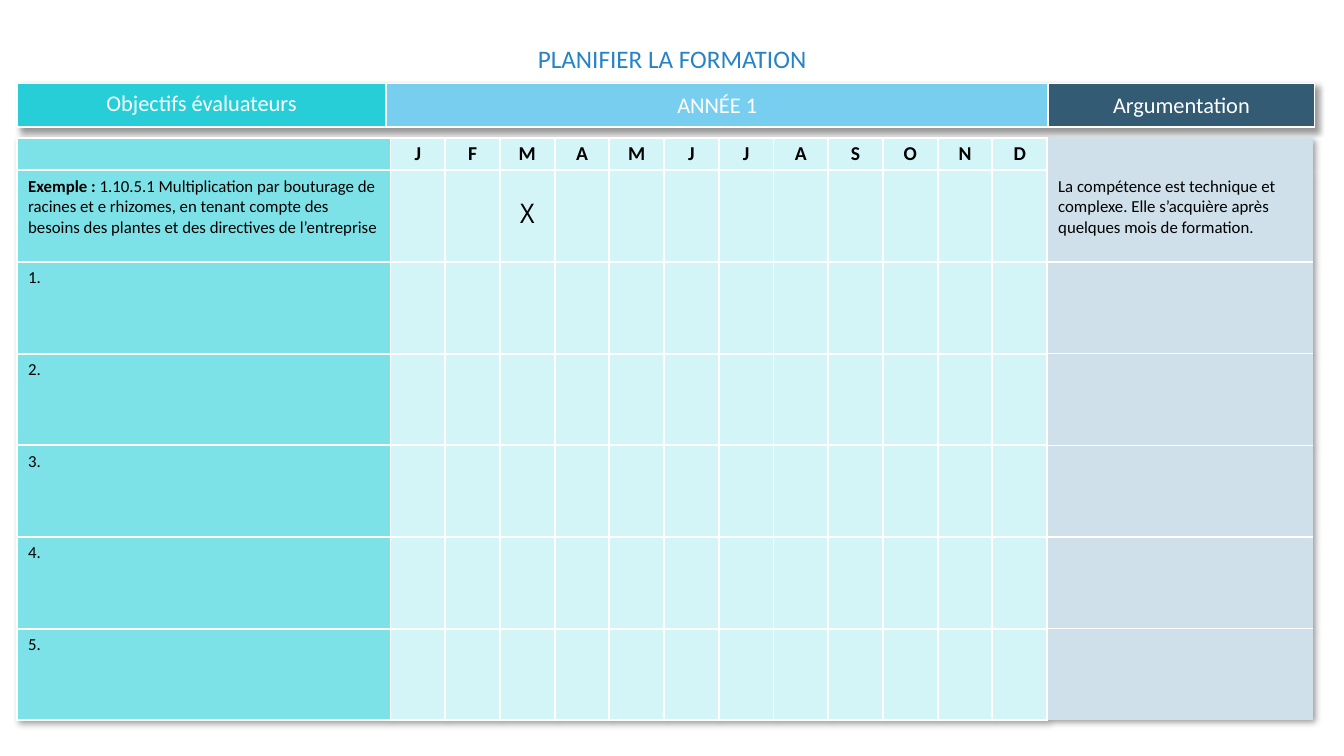
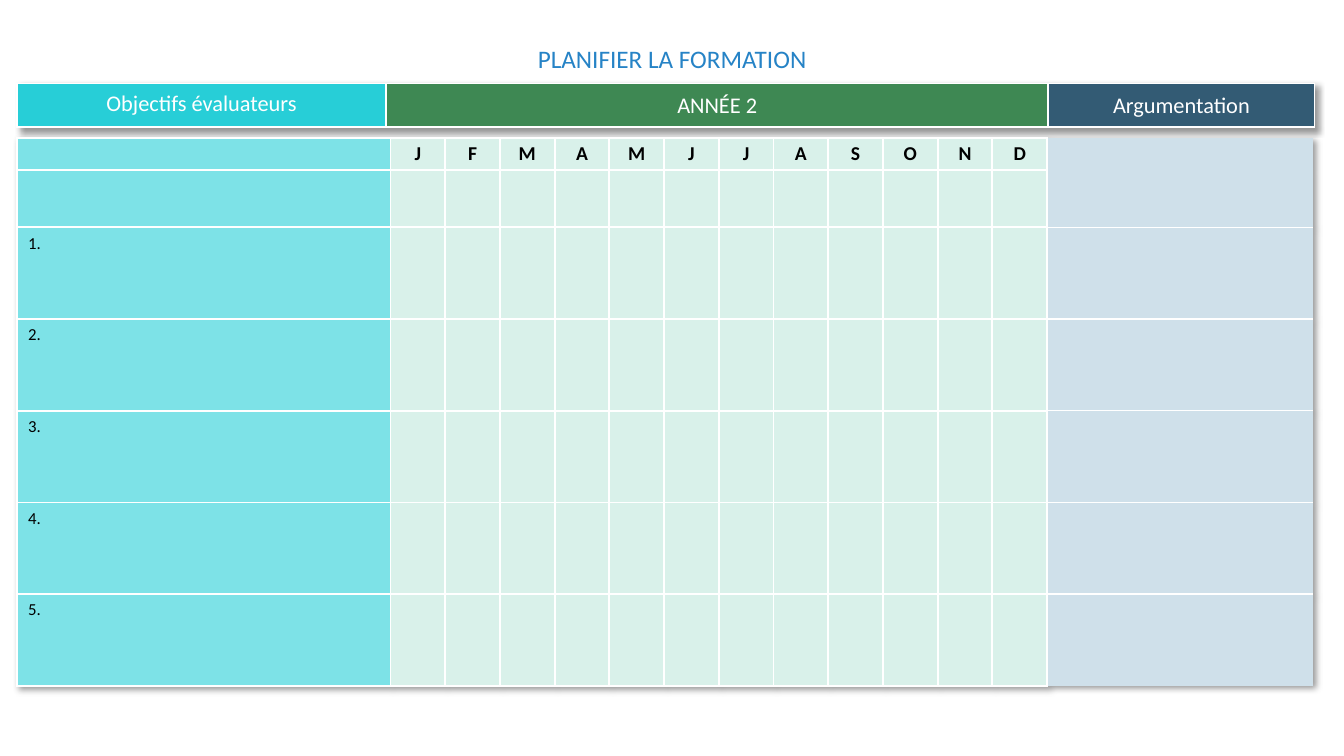
import pptx
import pptx.dml.color
import pptx.enum.text
import pptx.oxml
import pptx.oxml.ns
import pptx.util

Cm = pptx.util.Cm
Pt = pptx.util.Pt
ALIGN = pptx.enum.text.PP_ALIGN
ANCHOR = pptx.enum.text.MSO_ANCHOR
SPACE = pptx.oxml.ns.nsdecls("a")

# Shared colours and measures (cm)
WHITE, BLACK, BLUE = "FFFFFF", "000000", "2683C6"
AQUA, PALE = "27CED7", "7DE2E7"
NAVY, MIST = "335B74", "CFE0EA"
LEFT = 0.43
HEAD = [9.3, 16.69, 6.71]
COLS = [9.41] + [1.38] * 12 + [6.71]
MONTHS = "JFMAMJJASOND"
TALL = 2.31
PLAIN_STYLE = "{2D5ABB26-0587-4C30-8999-92F81FD0307C}"


def hue(code):
    return pptx.dml.color.RGBColor.from_string(code)


class Deck:
    font = "Calibri"

    def __init__(self):
        self.file = pptx.Presentation()
        self.file.slide_width = Cm(33.87)
        self.file.slide_height = Cm(19.05)
        self.slide = None

    def page(self):
        self.slide = self.file.slides.add_slide(self.file.slide_layouts[6])

    def style(self, run, size, color, bold=False, font=None):
        run.font.name = font or self.font
        run.font.size = Pt(size)
        run.font.bold = bold
        run.font.color.rgb = hue(color)

    def title(self, text):
        box = self.slide.shapes.add_textbox(
            Cm(1.7), Cm(0.76), Cm(30.48), Cm(1.37))
        frame = box.text_frame
        frame.word_wrap = True
        frame.vertical_anchor = ANCHOR.MIDDLE
        frame.text = text
        para = frame.paragraphs[0]
        para.alignment = ALIGN.CENTER
        para.line_spacing = 1.07
        para.space_after = Pt(8)
        self.style(para.runs[0], 18, BLUE)

    def table(self, top, cols, rows):
        frame = self.slide.shapes.add_table(
            len(rows), len(cols), Cm(LEFT), Cm(top),
            Cm(sum(cols)), Cm(sum(rows)))
        grid = frame.table
        grid.first_row = grid.horz_banding = False
        for part, size in zip(grid.columns, cols):
            part.width = Cm(size)
        for part, size in zip(grid.rows, rows):
            part.height = Cm(size)
        # Plain table style with a soft shadow
        props = grid._tbl.tblPr
        props.find(pptx.oxml.ns.qn("a:tableStyleId")).text = PLAIN_STYLE
        props.insert(0, pptx.oxml.parse_xml(
            f'<a:effectLst {SPACE}><a:outerShdw blurRad="50800" dist="38100" '
            'dir="2700000" algn="tl" rotWithShape="0"><a:srgbClr val="000000">'
            '<a:alpha val="40000"/></a:srgbClr></a:outerShdw></a:effectLst>'))
        return grid

    def cell(self, cell, fill, edges, pad=(0.28, 0.15)):
        """Fill and pad a cell; edges maps L, R, T, B to widths in points."""
        cell.fill.solid()
        cell.fill.fore_color.rgb = hue(fill)
        cell.margin_left = cell.margin_right = Cm(pad[0])
        cell.margin_top = cell.margin_bottom = Cm(pad[1])
        props = cell._tc.get_or_add_tcPr()
        for spot, side in enumerate(s for s in "LRTB" if s in edges):
            props.insert(spot, pptx.oxml.parse_xml(
                f'<a:ln{side} {SPACE} w="{Pt(edges[side])}"><a:solidFill>'
                f'<a:srgbClr val="{WHITE}"/></a:solidFill></a:ln{side}>'))

    def label(self, cell, text, size, color=BLACK, bold=False, font=None,
              center=False, middle=False, lead=""):
        """Put text in a cell, after an optional bold lead."""
        para = cell.text_frame.paragraphs[0]
        if lead:
            run = para.add_run()
            run.text = lead
            self.style(run, size, color, True, font)
        run = para.add_run()
        run.text = text
        self.style(run, size, color, bold, font)
        if center:
            para.alignment = ALIGN.CENTER
        if middle:
            cell.vertical_anchor = ANCHOR.MIDDLE

    def header(self, year, tint):
        grid = self.table(2.11, HEAD, [1.09])
        parts = [("Objectifs évaluateurs", AQUA), (year, tint),
                 ("Argumentation", NAVY)]
        last = len(parts) - 1
        for col, (text, fill) in enumerate(parts):
            cell = grid.cell(0, col)
            self.cell(cell, fill, {"L": 1.5 if col else 1, "T": 1, "B": 1.5,
                                   "R": 1.5 if col < last else 1})
            self.label(cell, text, 16, WHITE, center=True, middle=col > 0)

    def plan(self, first, tint):
        """Month grid: month row, example row, then five numbered rows."""
        rows = [0.81, first] + [TALL] * 5
        grid = self.table(3.48, COLS, rows)
        end, low = len(COLS) - 1, len(rows) - 1
        for row in range(len(rows)):
            pad = (0.28, 0.15) if row else (0, 0)
            for col in range(len(COLS)):
                edges = dict.fromkeys("LRTB", 1.5)
                fill = tint
                if col == 0:
                    fill = PALE
                    edges["L"] = 1 if row < 3 else 1.5
                elif col == end:
                    fill = MIST
                    edges = {"L": 1.5}
                    if row > 1:
                        edges["T"] = 1
                    if 0 < row < low:
                        edges["B"] = 1
                self.cell(grid.cell(row, col), fill, edges, pad)
            if row > 1:
                self.label(grid.cell(row, 0), f"{row - 1}.", 12)
        for col, month in enumerate(MONTHS, 1):
            self.label(grid.cell(0, col), month, 14, bold=True,
                       center=True, middle=True)
        return grid


def main():
    deck = Deck()
    years = [("ANNÉE 1", "77CEEF", TALL, "D4F5F7"),
             ("ANNÉE 2", "3E8853", 1.44, "D9F1EA")]
    grids = []
    for year, band, first, tint in years:
        deck.page()
        deck.header(year, band)
        grids.append(deck.plan(first, tint))
        deck.title("PLANIFIER LA FORMATION")

    # Worked example in the first year
    grid = grids[0]
    deck.label(grid.cell(1, 0),
               "1.10.5.1 Multiplication par bouturage de racines et e "
               "rhizomes, en tenant compte des besoins des plantes et des "
               "directives de l’entreprise", 12, lead="Exemple : ")
    deck.label(grid.cell(1, 3), "X", 20, font="Arial Narrow",
               center=True, middle=True)
    deck.label(grid.cell(1, len(COLS) - 1),
               "La compétence est technique et complexe. Elle s’acquière "
               "après quelques mois de formation.", 12)
    deck.file.save("out.pptx")


if __name__ == "__main__":
    main()
